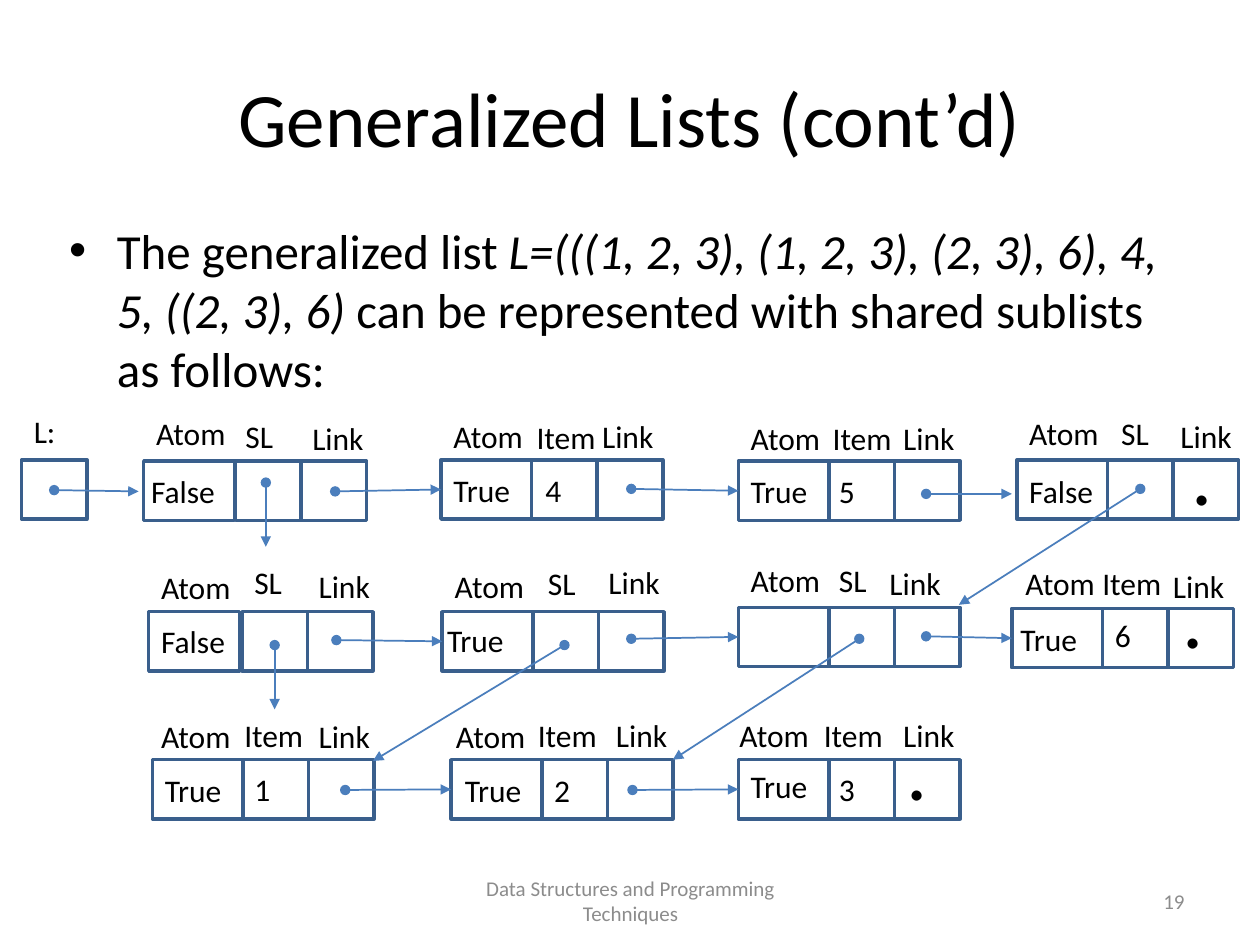
from lxml import etree
from pptx import Presentation, util as u
from pptx.dml.color import RGBColor
from pptx.enum import shapes, text
from pptx.oxml import ns

COLUMNS, ROWS = 100, 75
CELL_HEIGHT = 4.7
CELL_WIDTHS = (7.2, 5.2, 5.2)
BLACK, GRAY, BORDER, ARROW = "000000", "8C8C8C", "3A5F8C", "4B7EBC"

NODES = {
    "first": (11.4, 36.6, 0.1, [("Atom", 0, -4.2), ("SL", 7.1, -4), ("Link", 12.4, -3.8), ("False", -0.4, 0.4)]),
    "four": (35, 36.5, 0, [("Atom", 0, -3.9), ("Item", 6.6, -3.8), ("Link", 11.8, -3.9), ("True", 0, 0.4),
                           ("4", 7.3, 0.4)]),
    "five": (58.6, 36.6, 0, [("Atom", 0, -3.8), ("Item", 6.5, -3.8), ("Link", 12.1, -3.8), ("True", 0, 0.4),
                             ("5", 7, 0.4)]),
    "last": (80.7, 36.5, 0, [("Atom", 0, -4.1), ("SL", 7.3, -4.1), ("Link", 12, -3.9), ("False", 0, 0.5),
                             (".", 12.9, -3.5)]),
    "sublist": (11.8, 48.55, 0.2, [("Atom", 0, -3.95), ("SL", 7.4, -4.35), ("Link", 12.5, -4.05),
                                   ("False", 0, 0.35)]),
    "shared_one": (35.1, 48.55, 0, [("Atom", 0, -4.05), ("SL", 7.4, -4.25), ("Link", 12.2, -4.35),
                                    ("True", -0.6, 0.25)]),
    "shared_two": (58.6, 48.2, 0, [("Atom", 0, -4.2), ("SL", 7, -4.2), ("Link", 11, -3.9)]),
    "six": (80.3, 48.3, 0, [("Atom", 0.1, -4), ("Item", 6.2, -4), ("Link", 11.8, -3.8), ("True", -0.3, 0.4),
                            ("6", 7.2, 0.1), (".", 12.6, -4)]),
    "one": (12.1, 60.3, 0, [("Atom", -0.3, -3.9), ("Item", 6.3, -4), ("Link", 12.2, -3.9), ("True", 0, 0.4),
                            ("1", 7.1, 0.3)]),
    "two": (35.8, 60.3, 0, [("Atom", -0.6, -3.9), ("Item", 5.9, -4), ("Link", 12.1, -4), ("True", 0.1, 0.4),
                            ("2", 7.2, 0.4)]),
    "three": (58.6, 60.3, 0, [("Atom", -0.9, -4), ("Item", 5.8, -4), ("Link", 12.1, -4), ("True", 0, 0.1),
                              ("3", 7, 0.3), (".", 12.4, -3.9)]),
}

LINKS = [
    (26.6, 39, "four"), (50.1, 38.8, "five"),
    (26.7, 50.8, "shared_one"), (50.1, 50.7, "shared_two"), (73.5, 50.5, "six"),
    (27.4, 62.7, "two"), (50.2, 62.7, "three"),
]

POINTERS = [
    (4.3, 38.9, 11, 39), (73.5, 39.2, 80.3, 39.2),
    (21.1, 38.3, 21.1, 43.4), (21.8, 51.2, 21.8, 56.3),
    (90.5, 38.8, 76.1, 48), (44.8, 51.2, 29.6, 60.4), (68.2, 50.7, 53.4, 60.3),
]


def grid(*cells):
    """Turn grid units into slide lengths."""
    return [u.Inches(cell * 10 / COLUMNS) for cell in cells]


def color(value):
    """Turn a hex string into a colour."""
    return RGBColor.from_string(value)


def add_text(page, box, spans, size, ink=BLACK, align=text.PP_ALIGN.LEFT, anchor=text.MSO_ANCHOR.TOP):
    """Write one paragraph of (wording, italic) spans and return it."""
    frame = page.shapes.add_textbox(*grid(*box)).text_frame
    frame.word_wrap = True
    frame.vertical_anchor = anchor
    para = frame.paragraphs[0]
    para.alignment = align
    for wording, italic in spans:
        span = para.add_run()
        span.text = wording
        span.font.name = "Calibri"
        span.font.size = u.Pt(size)
        span.font.italic = italic
        span.font.color.rgb = color(ink)
    return para


def add_label(page, wording, left, top):
    """Write a heading, value or end mark of a node."""
    if wording == ".":
        add_text(page, (left, top, 5, 9.1), [(wording, False)], 48)
    else:
        width = 7.9 if len(wording) > 2 else 5
        add_text(page, (left, top, width, 4), [(wording, False)], 18)


def add_cell(page, left, top, width):
    """Draw one outlined cell and return it."""
    cell = page.shapes.add_shape(shapes.MSO_SHAPE.RECTANGLE, *grid(left, top, width, CELL_HEIGHT))
    cell.shadow.inherit = False
    cell.fill.background()
    cell.line.color.rgb = color(BORDER)
    cell.line.width = u.Pt(2)
    return cell


def add_node(page, left, top, gap, labels):
    """Draw a three-cell node with its labels and return its first cell."""
    cells = []
    offset = 0
    for width in CELL_WIDTHS:
        cells.append(add_cell(page, left + offset, top, width))
        offset += width + (gap if len(cells) == 1 else 0)
    for wording, across, down in labels:
        add_label(page, wording, left + across, top + down)
    return cells[0]


def add_arrow(page, start, end, target=None):
    """Draw a pointer with a dot at its start, joined to a target if given."""
    arrow = page.shapes.add_connector(shapes.MSO_CONNECTOR.STRAIGHT, *grid(*start, *end))
    arrow.line.color.rgb = color(ARROW)
    arrow.line.width = u.Pt(1)
    if target is not None:
        arrow.end_connect(target, 1)
    line = arrow.line._get_or_add_ln()
    etree.SubElement(line, ns.qn("a:headEnd"), type="oval")
    etree.SubElement(line, ns.qn("a:tailEnd"), type="triangle")
    etree.SubElement(arrow._element.spPr, ns.qn("a:effectLst"))


def add_heading(page, box):
    """Write the slide title."""
    add_text(page, box, [("Generalized Lists (cont’d)", False)], 44,
             align=text.PP_ALIGN.CENTER, anchor=text.MSO_ANCHOR.MIDDLE)


def add_statement(page, box):
    """Write the bulleted statement."""
    spans = [
        ("The generalized list ", False),
        ("L=(((1, 2, 3), (1, 2, 3), (2, 3), 6), 4, 5, ((2, 3), 6) ", True),
        ("can be represented with shared sublists as follows:", False),
    ]
    para = add_text(page, box, spans, 28)
    layout = para._p.get_or_add_pPr()
    indent = u.Inches(0.38)
    layout.set("marL", str(indent))
    layout.set("indent", str(-indent))
    etree.SubElement(layout, ns.qn("a:buFont"), typeface="Arial")
    etree.SubElement(layout, ns.qn("a:buChar"), char="•")


def add_diagram(page, left, top):
    """Draw the list head, the nodes and the arrows between them."""
    add_cell(page, left, top, CELL_WIDTHS[1])
    add_label(page, "L:", left, top - 4.3)
    first_cells = {name: add_node(page, *node) for name, node in NODES.items()}
    for across, down, name in LINKS:
        node_left, node_top = NODES[name][:2]
        add_arrow(page, (across, down), (node_left, node_top + CELL_HEIGHT / 2), first_cells[name])
    for pointer in POINTERS:
        add_arrow(page, pointer[:2], pointer[2:])


def add_footer(page, top, height):
    """Write the course name and the page number."""
    middle = text.MSO_ANCHOR.MIDDLE
    add_text(page, (34.2, top, 31.7, height), [("Data Structures and Programming Techniques", False)], 12,
             GRAY, text.PP_ALIGN.CENTER, middle)
    add_text(page, (71.7, top, 23.3, height), [("19", False)], 12, GRAY, text.PP_ALIGN.RIGHT, middle)


def main():
    """Build the slide and save the deck."""
    deck = Presentation()
    deck.slide_width, deck.slide_height = grid(COLUMNS, ROWS)
    page = deck.slides.add_slide(deck.slide_layouts[6])
    add_heading(page, (5, 3, 90, 12.5))
    add_statement(page, (4.5, 17, 90, 49.5))
    add_diagram(page, 1.7, 36.5)
    add_footer(page, 69.5, 4)
    deck.save("out.pptx")


if __name__ == "__main__":
    main()
